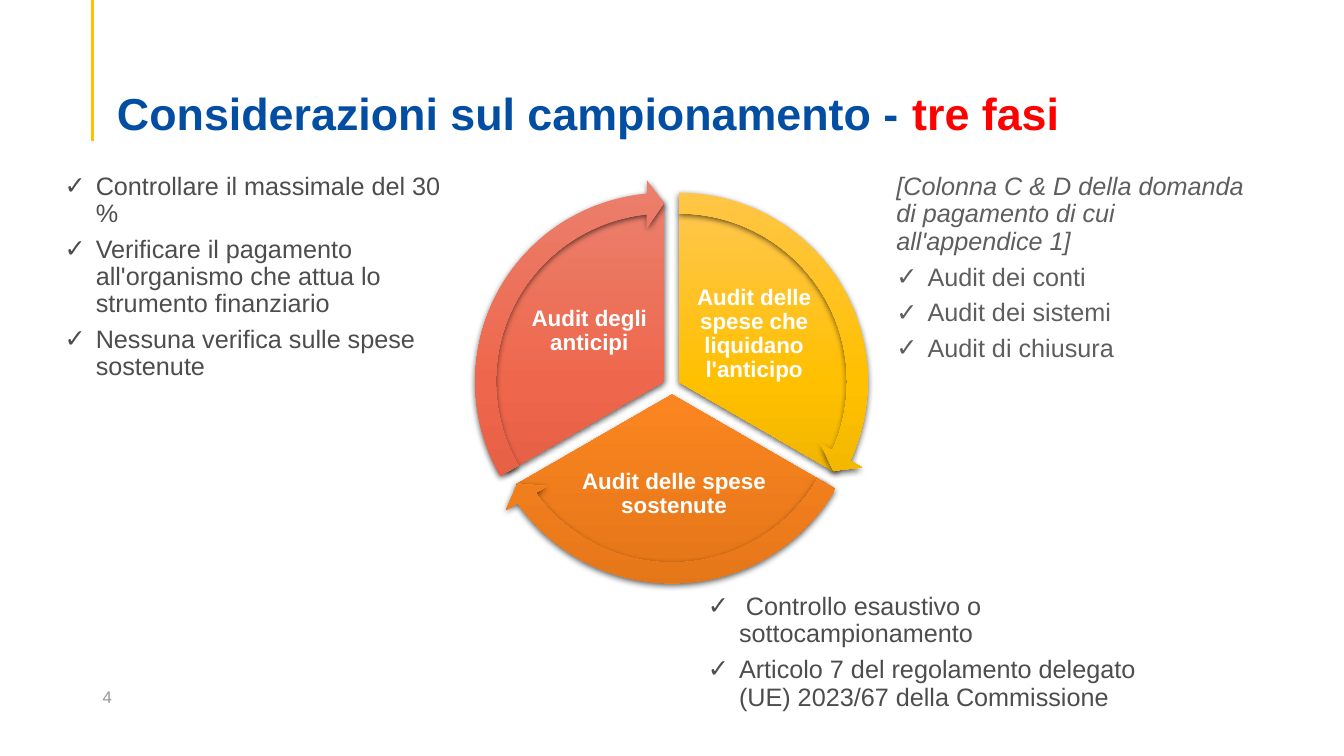
from copy import deepcopy

from lxml.etree import SubElement
from pptx import Presentation
from pptx.dml.color import RGBColor
from pptx.enum.shapes import MSO_CONNECTOR, MSO_SHAPE
from pptx.enum.text import MSO_ANCHOR, MSO_AUTO_SIZE, PP_ALIGN
from pptx.oxml.ns import qn
from pptx.util import Inches, Pt

BLUE = RGBColor(0x03, 0x4E, 0xA2)
RED = RGBColor(0xFF, 0x00, 0x00)
WHITE = RGBColor(0xFF, 0xFF, 0xFF)
DARK_GREY = RGBColor(0x4D, 0x4D, 0x4D)
MID_GREY = RGBColor(0x5E, 0x5E, 0x5E)
LIGHT_GREY = RGBColor(0x97, 0x97, 0x97)
GOLD = RGBColor(0xFF, 0xC0, 0x00)
YELLOWS = (RGBColor(0xFF, 0xC6, 0x4B), GOLD, RGBColor(0xE3, 0xAB, 0x00))
ORANGES = (RGBColor(0xF5, 0x94, 0x54), RGBColor(0xFB, 0x86, 0x21),
           RGBColor(0xE5, 0x76, 0x18))
CORALS = (RGBColor(0xEB, 0x7F, 0x6C), RGBColor(0xEE, 0x67, 0x4C),
          RGBColor(0xDC, 0x56, 0x3B))

TITLE_FONT = {"name": "Arial", "size": Pt(32), "bold": True}
LABEL_FONT = {"name": "Arial", "size": Pt(16), "bold": True}
NOTE_FONT = {"name": "Arial", "size": Pt(18)}
NUMBER_FONT = {"name": "Arial", "size": Pt(12)}

ARROW_SIZE = 4.01

# Pie: box and angles; arrow: corner and angles; label: box and text
PHASES = [
    {"colors": YELLOWS,
     "pie": (4.92, 2.1, 3.63, 3.38), "pie_angles": (162, 18),
     "arrow": (4.73, 1.78), "arrow_angles": (14.73, 162),
     "label": (6.83, 2.81, 1.3, 1.01),
     "text": "Audit delle spese che liquidano l'anticipo"},
    {"colors": ORANGES,
     "pie": (4.88, 2.13, 3.57, 3.57), "pie_angles": (18, 90),
     "arrow": (4.66, 1.91), "arrow_angles": (86.72, 18),
     "label": (5.73, 4.44, 1.91, 0.93),
     "text": "Audit delle spese sostenute"},
    {"colors": CORALS,
     "pie": (4.78, 2, 3.61, 3.57), "pie_angles": (90, 162),
     "arrow": (4.58, 1.78), "arrow_angles": (158.73, 90),
     "label": (5.2, 2.76, 1.29, 1.06),
     "text": "Audit degli anticipi"},
]

ADVANCE_CHECKS = [
    "Controllare il massimale del 30 %",
    "Verificare il pagamento all'organismo che attua lo strumento finanziario",
    "Nessuna verifica sulle spese sostenute",
]
CLEARING_INTRO = ("[Colonna C & D della domanda di pagamento di cui "
                  "all'appendice 1]")
CLEARING_CHECKS = ["Audit dei conti", "Audit dei sistemi", "Audit di chiusura"]
EXPENSE_CHECKS = [
    " Controllo esaustivo o sottocampionamento",
    "Articolo 7 del regolamento delegato (UE) 2023/67 della Commissione",
]


def apply_format(target, values):
    for name, value in values.items():
        setattr(target, name, value)


def set_font(font, values, color):
    apply_format(font, values)
    font.color.rgb = color


def set_frame(frame, insets, anchor=MSO_ANCHOR.MIDDLE):
    left, top, right, bottom = map(Inches, insets)
    apply_format(frame, {
        "word_wrap": True, "auto_size": MSO_AUTO_SIZE.NONE,
        "vertical_anchor": anchor,
        "margin_left": left, "margin_top": top,
        "margin_right": right, "margin_bottom": bottom})


def add_frame(slide, box, insets):
    frame = slide.shapes.add_textbox(*map(Inches, box)).text_frame
    set_frame(frame, insets)
    return frame


def add_check_mark(paragraph):
    properties = paragraph._p.get_or_add_pPr()
    properties.set("marL", str(Inches(0.31)))
    properties.set("indent", str(-Inches(0.31)))
    SubElement(properties, qn("a:buFont"), typeface="Arial")
    SubElement(properties, qn("a:buChar"), char="✓")


def add_notes_list(slide, box, checks, color, intro=None):
    frame = add_frame(slide, box, (0.09,) * 4)
    lines = ([intro] if intro else []) + checks
    for index, line in enumerate(lines):
        paragraph = frame.paragraphs[0] if index == 0 else frame.add_paragraph()
        apply_format(paragraph, {"line_spacing": 0.9, "space_after": Pt(6.2)})
        if line != intro:
            add_check_mark(paragraph)
        run = paragraph.add_run()
        run.text = line
        set_font(run.font, NOTE_FONT | {"italic": line == intro}, color)


def add_sector(slide, kind, box, adjustments, colors):
    sector = slide.shapes.add_shape(kind, *map(Inches, box))
    for index, value in enumerate(adjustments):
        sector.adjustments[index] = value
    sector.line.fill.background()

    # Three-step gradient from top to bottom
    sector.fill.gradient()
    sector.fill.gradient_angle = 270
    properties = sector.element.spPr
    stop_list = properties.find(qn("a:gradFill")).find(qn("a:gsLst"))
    stop_list.append(deepcopy(stop_list[0]))
    for stop, color, position in zip(sector.fill.gradient_stops, colors,
                                     (0, 0.5, 1)):
        stop.color.rgb = color
        stop.position = position

    # Soft shadow below
    sector.shadow.inherit = False
    shadow = SubElement(properties.find(qn("a:effectLst")), qn("a:outerShdw"),
                        blurRad=str(Pt(4.5)), dist=str(Pt(1.5)),
                        dir="5400000", rotWithShape="0")
    black = SubElement(shadow, qn("a:srgbClr"), val="000000")
    SubElement(black, qn("a:alpha"), val="63000")


def add_label(slide, box, text):
    paragraph = add_frame(slide, box, (0.02,) * 4).paragraphs[0]
    apply_format(paragraph, {"alignment": PP_ALIGN.CENTER, "line_spacing": 0.9})
    run = paragraph.add_run()
    run.text = text
    set_font(run.font, LABEL_FONT, WHITE)


def add_title(slide):
    title = slide.shapes.title
    apply_format(title, {"left": Inches(1.06), "top": Inches(0.53),
                         "width": Inches(11.5), "height": Inches(0.86)})
    set_frame(title.text_frame, (0.1, 0.05, 0.1, 0), MSO_ANCHOR.BOTTOM)
    paragraph = title.text_frame.paragraphs[0]
    apply_format(paragraph, {"alignment": PP_ALIGN.LEFT, "line_spacing": 0.9})
    for text, color in (("Considerazioni sul campionamento - ", BLUE),
                        ("tre fasi", RED)):
        run = paragraph.add_run()
        run.text = text
        set_font(run.font, TITLE_FONT, color)


def add_title_rule(slide):
    rule = slide.shapes.add_connector(
        MSO_CONNECTOR.STRAIGHT, Inches(0.92), Inches(0), Inches(0.92), Inches(1.4))
    rule.line.color.rgb = GOLD
    rule.line.width = Pt(2.25)
    SubElement(rule.element.spPr, qn("a:effectLst"))


def add_page_number(slide):
    frame = add_frame(slide, (0.92, 6.71, 3, 0.4), (0.1, 0.05, 0.1, 0.05))
    run = frame.paragraphs[0].add_run()
    run.text = "4"
    set_font(run.font, NUMBER_FONT, LIGHT_GREY)


def main():
    deck = Presentation()
    deck.slide_width, deck.slide_height = Inches(13.33), Inches(7.5)
    slide = deck.slides.add_slide(deck.slide_layouts[5])

    # Heading
    add_title_rule(slide)
    add_title(slide)

    # Cycle: sectors with labels, then the arrows on top
    for phase in PHASES:
        add_sector(slide, MSO_SHAPE.PIE, phase["pie"], phase["pie_angles"],
                   phase["colors"])
        add_label(slide, phase["label"], phase["text"])
    for phase in PHASES:
        add_sector(slide, MSO_SHAPE.CIRCULAR_ARROW,
                   (*phase["arrow"], ARROW_SIZE, ARROW_SIZE),
                   (0.051, 3.28, *phase["arrow_angles"], 0.059),
                   phase["colors"])

    # Checks for each phase
    add_notes_list(slide, (0.55, 1.26, 4.09, 2.98), ADVANCE_CHECKS, DARK_GREY)
    add_notes_list(slide, (8.8, 1.58, 3.82, 2.17), CLEARING_CHECKS, MID_GREY,
                   CLEARING_INTRO)
    add_notes_list(slide, (6.93, 5.87, 4.96, 1.21), EXPENSE_CHECKS, DARK_GREY)

    add_page_number(slide)
    deck.save("out.pptx")


if __name__ == "__main__":
    main()
